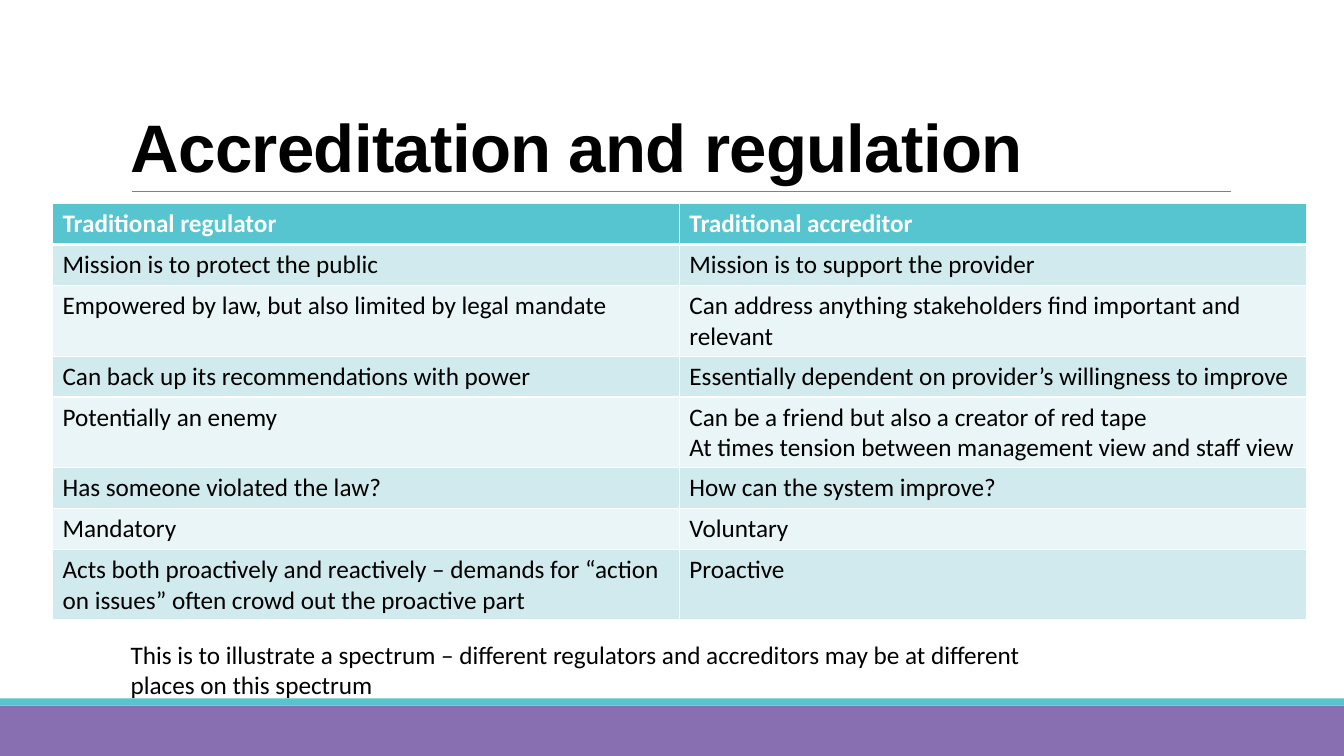
"""Build a slide comparing traditional regulators with accreditors."""
from lxml import etree
from pptx import Presentation
from pptx.dml.color import RGBColor
from pptx.enum.shapes import MSO_CONNECTOR, MSO_SHAPE
from pptx.enum.text import MSO_ANCHOR
from pptx.oxml.ns import qn
from pptx.util import Emu, Pt

STRAIGHT = MSO_CONNECTOR.STRAIGHT
RECTANGLE = MSO_SHAPE.RECTANGLE
BOTTOM = MSO_ANCHOR.BOTTOM
PX = 9525
COLORS = {
    "purple": "876FB2", "teal": "56C5D0", "band": "D1EAEE", "pale": "E9F5F7",
    "rule": "808080", "text": "000000", "white": "FFFFFF",
}
COLUMN_WIDTH = 597
LINE_ROW, DOUBLE_ROW = 39, 67
ROWS = [
    (LINE_ROW, "Traditional regulator", "Traditional accreditor"),
    (LINE_ROW, "Mission is to protect the public", "Mission is to support the provider"),
    (DOUBLE_ROW, "Empowered by law, but also limited by legal mandate",
     "Can address anything stakeholders find important and relevant"),
    (LINE_ROW, "Can back up its recommendations with power",
     "Essentially dependent on provider’s willingness to improve"),
    (DOUBLE_ROW, "Potentially an enemy",
     "Can be a friend but also a creator of red tape\n"
     "At times tension between management view and staff view"),
    (LINE_ROW, "Has someone violated the law?", "How can the system improve?"),
    (LINE_ROW, "Mandatory", "Voluntary"),
    (DOUBLE_ROW, "Acts both proactively and reactively – demands for “action on issues” "
     "often crowd out the proactive part", "Proactive"),
]


def write(text_frame, text, size, font_name, color, bold=False):
    text_frame.word_wrap = True
    text_frame.text = text
    for paragraph in text_frame.paragraphs:
        font = paragraph.font
        font.size, font.name, font.bold = Pt(size), font_name, bold
        font.color.rgb = RGBColor.from_string(COLORS[color])


def add_border(cell, side, width):
    line = etree.SubElement(cell._tc.get_or_add_tcPr(), qn(f"a:ln{side}"), w=str(Pt(width)))
    fill = etree.SubElement(line, qn("a:solidFill"))
    etree.SubElement(fill, qn("a:srgbClr"), val=COLORS["white"])


presentation = Presentation()
presentation.slide_width, presentation.slide_height = Emu(1280 * PX), Emu(720 * PX)
slide = presentation.slides.add_slide(presentation.slide_layouts[6])
shapes = slide.shapes

for top, height, color in ((672, 48, "purple"), (665, 7, "teal")):
    bar = shapes.add_shape(RECTANGLE, 0, top * PX, 1280 * PX, height * PX)
    bar.shadow.inherit = False
    bar.fill.solid()
    bar.fill.fore_color.rgb = RGBColor.from_string(COLORS[color])
    bar.line.fill.background()

title_rule = shapes.add_connector(STRAIGHT, 126 * PX, 182 * PX, 1172 * PX, 182 * PX)
title_rule.line.color.rgb = RGBColor.from_string(COLORS["rule"])
title_rule.line.width = Pt(0.5)
etree.SubElement(title_rule._element.spPr, qn("a:effectLst"))

title = shapes.add_textbox(115 * PX, 30 * PX, 1056 * PX, 152 * PX).text_frame
write(title, "Accreditation and regulation", 48, "Arial", "text", bold=True)
title.vertical_anchor = BOTTOM
title.paragraphs[0].line_spacing = 0.85
title.paragraphs[0].runs[0].font._element.set("spc", "-50")

table_height = sum(row[0] for row in ROWS)
table = shapes.add_table(
    len(ROWS), 2, 50 * PX, 194 * PX, 2 * COLUMN_WIDTH * PX, table_height * PX).table
for row_index, (row_height, *texts) in enumerate(ROWS):
    table.rows[row_index].height = Emu(row_height * PX)
    is_header = row_index == 0
    fill_color = "teal" if is_header else "band" if row_index % 2 else "pale"
    for column_index, text in enumerate(texts):
        cell = table.cell(row_index, column_index)
        for side in "LRTB":
            under_header = (row_index, side) in ((0, "B"), (1, "T"))
            add_border(cell, side, 3 if under_header else 1)
        cell.fill.solid()
        cell.fill.fore_color.rgb = RGBColor.from_string(COLORS[fill_color])
        write(cell.text_frame, text, 18, "Calibri", "white" if is_header else "text", is_header)

note = shapes.add_textbox(115 * PX, 604 * PX, 916 * PX, 68 * PX).text_frame
write(note, "This is to illustrate a spectrum – different regulators and accreditors "
      "may be at different places on this spectrum", 18, "Calibri", "text")

presentation.save("out.pptx")
